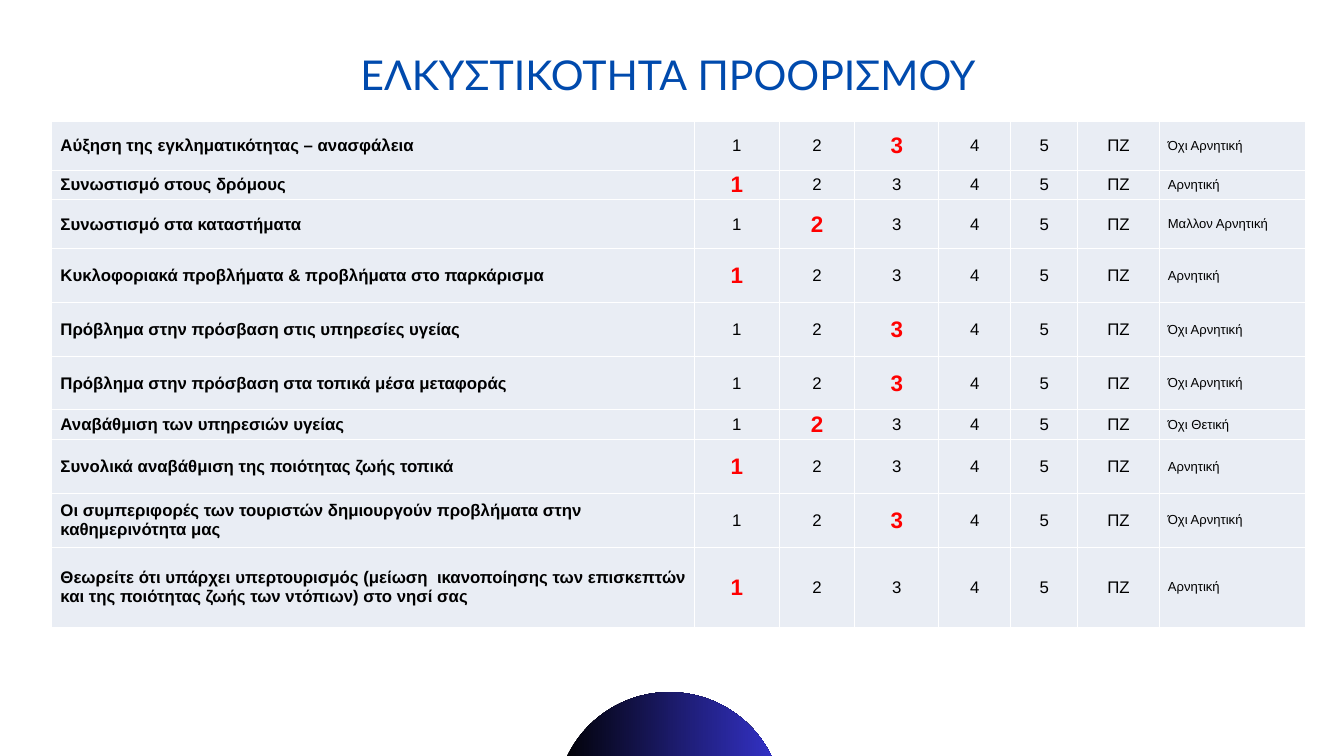
from lxml import etree
from pptx import Presentation
from pptx.dml.color import RGBColor
from pptx.enum import shapes, text
from pptx.oxml import ns
from pptx.util import Inches, Pt

BLUE = RGBColor(0x00, 0x4A, 0xAD)
BLACK = RGBColor(0, 0, 0)
RED = RGBColor(0xFF, 0, 0)
WHITE = RGBColor(0xFF, 0xFF, 0xFF)
PALE = RGBColor(0xE9, 0xED, 0xF4)
INDIGO = RGBColor(0x35, 0x33, 0xCD)

SCALE = ["1", "2", "3", "4", "5", "ΠΖ"]
WIDTHS = [9.56, 1.27, 1.12, 1.25, 1.07, 1, 1.21, 2.18]

# Row height, question, chosen score, verdict
ROWS = [
    (0.73, "Αύξηση της εγκληματικότητας – ανασφάλεια", "3", "Όχι Αρνητική"),
    (0.44, "Συνωστισμό στους δρόμους", "1", "Αρνητική"),
    (0.73, "Συνωστισμό στα καταστήματα", "2", "Μαλλον Αρνητική"),
    (0.8, "Κυκλοφοριακά προβλήματα & προβλήματα στο παρκάρισμα", "1", "Αρνητική"),
    (0.8, "Πρόβλημα στην πρόσβαση στις υπηρεσίες υγείας", "3", "Όχι Αρνητική"),
    (0.8, "Πρόβλημα στην πρόσβαση στα τοπικά μέσα μεταφοράς", "3", "Όχι Αρνητική"),
    (0.44, "Αναβάθμιση των υπηρεσιών υγείας", "2", "Όχι Θετική"),
    (0.8, "Συνολικά αναβάθμιση της ποιότητας ζωής τοπικά", "1", "Αρνητική"),
    (0.8, "Οι συμπεριφορές των τουριστών δημιουργούν προβλήματα στην "
          "καθημερινότητα μας", "3", "Όχι Αρνητική"),
    (1.19, "Θεωρείτε ότι υπάρχει υπερτουρισμός (μείωση  ικανοποίησης των "
           "επισκεπτών και της ποιότητας ζωής των ντόπιων) στο νησί σας",
     "1", "Αρνητική"),
]


def style(par, font, size, color, bold=False):
    par.font.name = font
    par.font.size = Pt(size)
    par.font.color.rgb = color
    par.font.bold = bold


def add_title(slide):
    box = slide.shapes.add_textbox(Inches(0.61), Inches(0.47), Inches(18.67), Inches(1.25))
    frame = box.text_frame
    frame.word_wrap = True
    frame.vertical_anchor = text.MSO_ANCHOR.MIDDLE
    par = frame.paragraphs[0]
    par.text = "ΕΛΚΥΣΤΙΚΟΤΗΤΑ ΠΡΟΟΡΙΣΜΟΥ"
    par.alignment = text.PP_ALIGN.CENTER
    style(par, "Lato", 44, BLUE)


def add_borders(cell):
    """Draw a thin white line on all four sides; call before the fill is set."""
    props = cell._tc.get_or_add_tcPr()
    for side in ("a:lnL", "a:lnR", "a:lnT", "a:lnB"):
        line = etree.SubElement(props, ns.qn(side), w=str(Pt(1)))
        fill = etree.SubElement(line, ns.qn("a:solidFill"))
        etree.SubElement(fill, ns.qn("a:srgbClr"), val=str(WHITE))


def fill_cell(cell, words, size=18, color=BLACK, bold=False, center=False):
    add_borders(cell)
    cell.fill.solid()
    cell.fill.fore_color.rgb = PALE
    cell.vertical_anchor = text.MSO_ANCHOR.MIDDLE
    cell.margin_left = cell.margin_right = cell.margin_top = Inches(0.01)
    cell.margin_bottom = 0
    par = cell.text_frame.paragraphs[0]
    par.text = words
    if center:
        par.alignment = text.PP_ALIGN.CENTER
    else:
        par._p.get_or_add_pPr().set("marL", str(Inches(0.12)))
    style(par, "Arial", size, color, bold)


def add_survey(slide):
    high = sum(row[0] for row in ROWS)
    frame = slide.shapes.add_table(len(ROWS), len(WIDTHS), Inches(0.77), Inches(1.8),
                                   Inches(sum(WIDTHS)), Inches(high))
    table = frame.table
    table.first_row = table.horz_banding = False
    for col, width in zip(table.columns, WIDTHS):
        col.width = Inches(width)
    for row, (height, question, score, verdict) in zip(table.rows, ROWS):
        row.height = Inches(height)
        cells = list(row.cells)
        fill_cell(cells[0], question, bold=True)
        for cell, mark in zip(cells[1:-1], SCALE):
            if mark == score:
                fill_cell(cell, mark, 24, RED, bold=True, center=True)
            else:
                fill_cell(cell, mark, center=True)
        fill_cell(cells[-1], verdict, 14)


def add_disc(slide):
    disc = slide.shapes.add_shape(shapes.MSO_SHAPE.OVAL, Inches(8.27), Inches(10.3),
                                  Inches(3.38), Inches(3.38))
    disc.shadow.inherit = False
    disc.line.fill.background()
    disc.fill.gradient()
    disc.fill.gradient_angle = 0
    for stop, color in zip(disc.fill.gradient_stops, (BLACK, INDIGO)):
        stop.color.rgb = color


def main():
    deck = Presentation()
    deck.slide_width = Inches(20)
    deck.slide_height = Inches(11.25)
    slide = deck.slides.add_slide(deck.slide_layouts[6])
    add_title(slide)
    add_survey(slide)
    add_disc(slide)
    deck.save("out.pptx")


if __name__ == "__main__":
    main()
